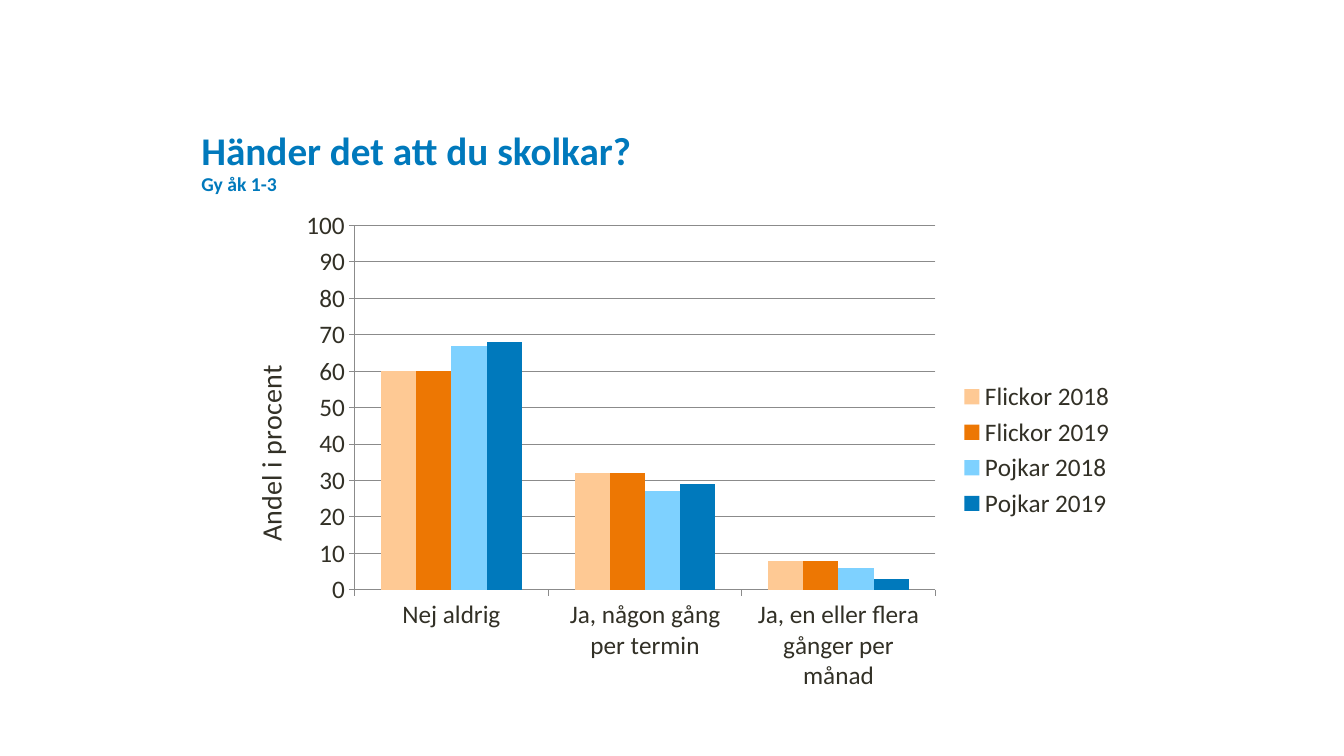
from dataclasses import dataclass

from lxml import etree
from pptx import Presentation
from pptx.chart import data
from pptx.dml import color
from pptx.enum import chart as charts, text
from pptx.oxml import ns
from pptx.util import Pt


@dataclass(frozen=True)
class Theme:
    """Colours, font and type sizes of the slide."""
    font: str = "Calibri"
    heading: str = "0079BC"
    ink: str = "323026"
    grid: str = "8B8B8B"
    title_size: int = 28
    subtitle_size: int = 14
    chart_size: int = 18
    axis_title_size: int = 20


THEME = Theme()
CATEGORIES = ["Nej aldrig", "Ja, någon gång per termin", "Ja, en eller flera gånger per månad"]
SERIES = [
    ("Flickor 2018", (60, 32, 8), "FEC994"),
    ("Flickor 2019", (60, 32, 8), "ED7703"),
    ("Pojkar 2018", (67, 27, 6), "7ED1FF"),
    ("Pojkar 2019", (68, 29, 3), "0079BC"),
]


def rgb(value):
    """Return a colour from its hex digits."""
    return color.RGBColor.from_string(value)


def style_font(font, size, ink, bold=False):
    """Apply the theme font with a size, colour and weight."""
    font.name = THEME.font
    font.size = Pt(size)
    font.bold = bold
    font.color.rgb = rgb(ink)


def add_text(paragraph, content, **style):
    """Append a formatted run to a paragraph."""
    run = paragraph.add_run()
    run.text = content
    style_font(run.font, **style)


def set_layout(parent, successors, **fractions):
    """Place a chart part by fractions of the chart area."""
    for old in parent.findall(ns.qn("c:layout")):
        parent.remove(old)
    layout = etree.Element(ns.qn("c:layout"))
    manual = etree.SubElement(layout, ns.qn("c:manualLayout"))
    settings = {"xMode": "edge", "yMode": "edge", **fractions}
    if "w" in fractions:
        settings = {"layoutTarget": "inner", **settings}
    for tag, value in settings.items():
        etree.SubElement(manual, ns.qn(f"c:{tag}")).set("val", str(value))
    following = [child for child in parent if child.tag in map(ns.qn, successors)]
    if following:
        following[0].addprevious(layout)
    else:
        parent.append(layout)


def add_heading(slide, left, top, width, height):
    """Write the question and the school years, resting on the box bottom."""
    frame = slide.shapes.add_textbox(Pt(left), Pt(top), Pt(width), Pt(height)).text_frame
    frame.word_wrap = True
    frame.vertical_anchor = text.MSO_ANCHOR.BOTTOM
    paragraph = frame.paragraphs[0]
    paragraph.line_spacing = 0.9
    add_text(paragraph, "Händer det att du skolkar?", size=THEME.title_size,
             ink=THEME.heading, bold=True)
    paragraph.add_line_break()
    add_text(paragraph, "Gy åk 1-3", size=THEME.subtitle_size, ink=THEME.heading, bold=True)


def style_axes(chart):
    """Set the scale, lines and title of both axes."""
    value_axis = chart.value_axis
    value_axis.minimum_scale = 0
    value_axis.maximum_scale = 100
    value_axis.major_unit = 10
    value_axis.has_major_gridlines = True
    for axis in (chart.category_axis, value_axis):
        axis.major_tick_mark = charts.XL_TICK_MARK.OUTSIDE
        axis.minor_tick_mark = charts.XL_TICK_MARK.NONE
        style_font(axis.tick_labels.font, THEME.chart_size, THEME.ink)
    for line in (chart.category_axis.format.line, value_axis.format.line,
                 value_axis.major_gridlines.format.line):
        line.color.rgb = rgb(THEME.grid)
        line.width = Pt(0.75)
    frame = value_axis.axis_title.text_frame
    add_text(frame.paragraphs[0], "Andel i procent", size=THEME.axis_title_size, ink=THEME.ink)
    body = frame.paragraphs[0]._p.getparent().find(ns.qn("a:bodyPr"))
    body.set("rot", "-5400000")
    body.set("vert", "horz")
    set_layout(value_axis.axis_title._element, ("c:overlay", "c:spPr", "c:txPr"), x=0.03, y=0.32)


def add_truancy_chart(slide, left, top, width, height):
    """Draw the clustered columns with their legend on the right."""
    chart_data = data.CategoryChartData()
    chart_data.categories = CATEGORIES
    for name, values, _ in SERIES:
        chart_data.add_series(name, values)
    chart = slide.shapes.add_chart(charts.XL_CHART_TYPE.COLUMN_CLUSTERED, Pt(left), Pt(top),
                                   Pt(width), Pt(height), chart_data).chart
    chart.has_title = False
    style_font(chart.font, THEME.chart_size, THEME.ink)
    style_axes(chart)
    plot = chart.plots[0]
    plot.gap_width = 150
    plot.overlap = 0
    plot.vary_by_categories = False
    for series, (_, _, fill) in zip(plot.series, SERIES):
        series.format.fill.solid()
        series.format.fill.fore_color.rgb = rgb(fill)
    chart.has_legend = True
    chart.legend.position = charts.XL_LEGEND_POSITION.RIGHT
    chart.legend.include_in_layout = False
    style_font(chart.legend.font, THEME.chart_size, THEME.ink)
    plot_area = chart._chartSpace.find(".//" + ns.qn("c:plotArea"))
    set_layout(plot_area, ("c:barChart",), x=0.15, y=0.05, w=0.64, h=0.73)


def main():
    """Build and save the presentation."""
    presentation = Presentation()
    presentation.slide_width = Pt(960)
    presentation.slide_height = Pt(540)
    slide = presentation.slides.add_slide(presentation.slide_layouts[6])
    add_heading(slide, 136.8, 61.2, 884.2, 82.1)
    add_truancy_chart(slide, 156.2, 143.3, 648, 356.4)
    presentation.save("out.pptx")


if __name__ == "__main__":
    main()
